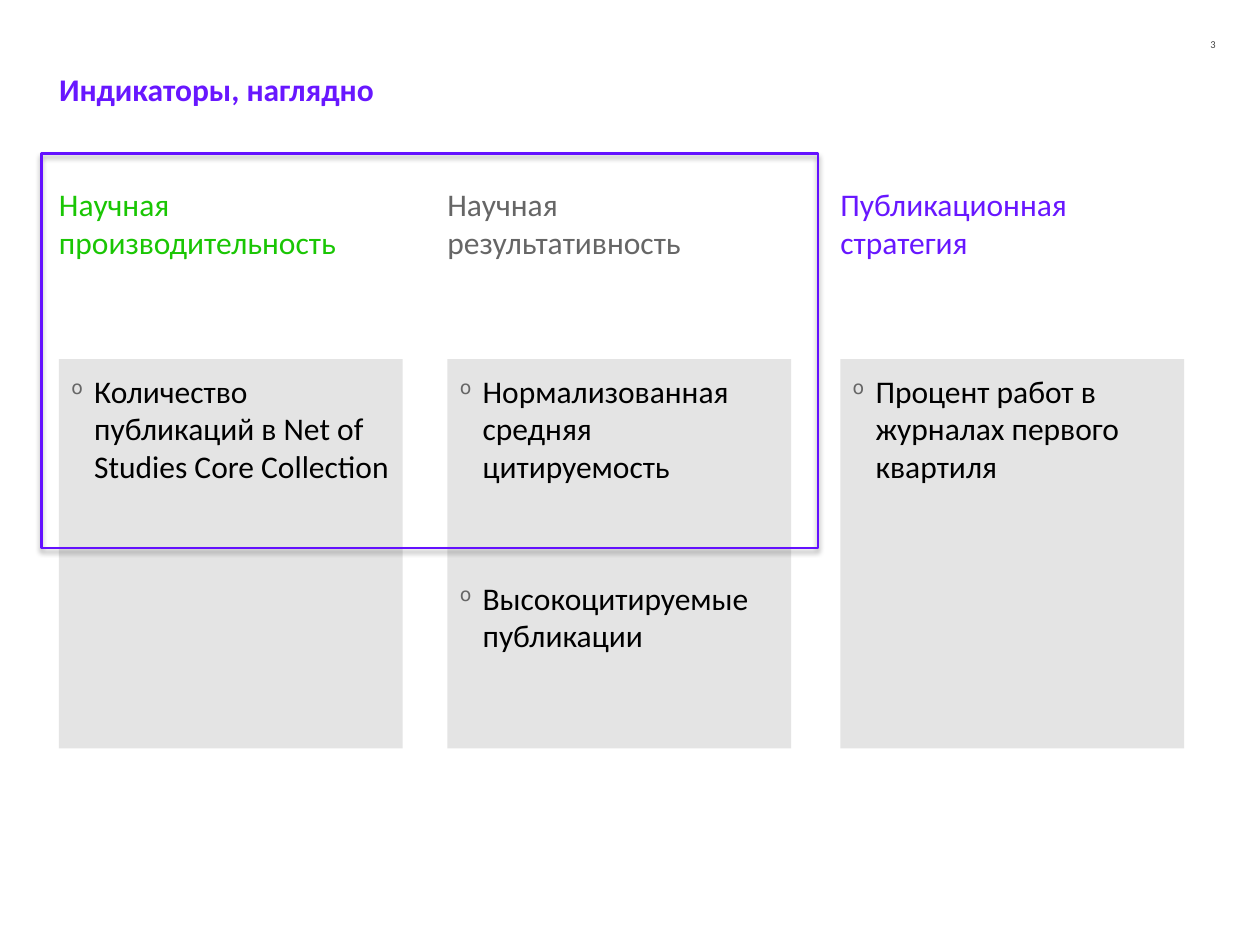
"""Build the slide that groups publication indicators into three columns."""
import lxml.etree
import pptx
import pptx.dml.color
import pptx.enum.shapes
import pptx.enum.text
import pptx.oxml.ns
import pptx.util

Cm = pptx.util.Cm
Pt = pptx.util.Pt

TITLE = "Индикаторы, наглядно"
SLIDE_NUMBER = "3"
COLUMNS = [
    {"left": 1.19, "heading": "Научная производительность", "color": "green",
     "heading_width": 6.25,
     "indicators": ["Количество публикаций в Net of Studies Core Collection"]},
    {"left": 9.02, "heading": "Научная результативность", "color": "gray",
     "heading_width": 5.54,
     "indicators": ["Нормализованная средняя цитируемость",
                    "Высокоцитируемые публикации"]},
    {"left": 16.94, "heading": "Публикационная стратегия", "color": "violet",
     "heading_width": 6.93,
     "indicators": ["Процент работ в журналах первого квартиля"]},
]
THEME = {
    "font": "Calibri", "text_size": 18, "number_size": 6,
    "violet": "6817FF", "green": "1AC604", "gray": "666666", "black": "000000",
    "number": "444444", "panel": "E4E4E4", "frame": "6411FF",
}
HEADING_TOP, HEADING_HEIGHT = 3.73, 1.8
PANEL_TOP, PANEL_WIDTH, PANEL_HEIGHT = 7.24, 6.93, 7.85
PANEL_INSET = 0.25
INDICATOR_GAP = 53.5
FRAME = (0.84, 3.1, 15.65, 7.95)


def theme_color(name):
    return pptx.dml.color.RGBColor.from_string(THEME[name])


def add_element(parent, tag, **attributes):
    element = lxml.etree.SubElement(parent, pptx.oxml.ns.qn(tag))
    for name, value in attributes.items():
        element.set(name, value)
    return element


def prepare_frame(shape, insets=(0, 0, 0, 0)):
    text_frame = shape.text_frame
    text_frame.word_wrap = True
    text_frame.auto_size = pptx.enum.text.MSO_AUTO_SIZE.NONE
    text_frame.vertical_anchor = pptx.enum.text.MSO_ANCHOR.TOP
    (text_frame.margin_left, text_frame.margin_top,
     text_frame.margin_right, text_frame.margin_bottom) = map(Cm, insets)
    return text_frame


def add_run(paragraph, text, color, size="text_size", bold=False,
            alignment=pptx.enum.text.PP_ALIGN.LEFT):
    paragraph.alignment = alignment
    run = paragraph.add_run()
    run.text = text
    run.font.name = THEME["font"]
    run.font.size = Pt(THEME[size])
    run.font.bold = bold
    run.font.color.rgb = theme_color(color)


def add_bullet(paragraph):
    properties = paragraph._p.get_or_add_pPr()
    properties.set("marL", str(Cm(0.71)))
    properties.set("indent", str(-Cm(0.46)))
    bullet_color = add_element(properties, "a:buClr")
    add_element(bullet_color, "a:srgbClr", val=THEME["gray"])
    add_element(properties, "a:buSzPct", val="60000")
    add_element(properties, "a:buChar", char="o")


def add_text(slide, box, text, color, **run_options):
    shape = slide.shapes.add_textbox(*map(Cm, box))
    text_frame = prepare_frame(shape)
    add_run(text_frame.paragraphs[0], text, color, **run_options)
    return text_frame


def add_rectangle(slide, box):
    shape = slide.shapes.add_shape(
        pptx.enum.shapes.MSO_SHAPE.RECTANGLE, *map(Cm, box))
    shape.shadow.inherit = False
    return shape


def add_panel(slide, column):
    panel = add_rectangle(
        slide, (column["left"], PANEL_TOP, PANEL_WIDTH, PANEL_HEIGHT))
    panel.fill.solid()
    panel.fill.fore_color.rgb = theme_color("panel")
    panel.line.fill.background()
    text_frame = prepare_frame(
        panel, (0, PANEL_INSET, PANEL_INSET, PANEL_INSET))
    for index, indicator in enumerate(column["indicators"]):
        paragraph = (text_frame.add_paragraph() if index
                     else text_frame.paragraphs[0])
        add_bullet(paragraph)
        if index:
            paragraph.space_before = Pt(INDICATOR_GAP)
        add_run(paragraph, indicator, "black")


def add_highlight(slide):
    highlight = add_rectangle(slide, FRAME)
    highlight.fill.background()
    highlight.line.color.rgb = theme_color("frame")
    highlight.line.width = Pt(1.5)
    effects = highlight._element.spPr.find(pptx.oxml.ns.qn("a:effectLst"))
    shadow = add_element(effects, "a:outerShdw", blurRad=str(Pt(3.1)),
                         dist=str(Pt(1.8)), dir="5400000", rotWithShape="0")
    shadow_color = add_element(shadow, "a:srgbClr", val=THEME["black"])
    add_element(shadow_color, "a:alpha", val="35000")


def main():
    presentation = pptx.Presentation()
    presentation.slide_width, presentation.slide_height = Cm(25.4), Cm(19.05)
    slide = presentation.slides.add_slide(presentation.slide_layouts[5])

    number_frame = add_text(
        slide, (23.9, 0.41, 0.61, 0.61), SLIDE_NUMBER, "number",
        size="number_size", alignment=pptx.enum.text.PP_ALIGN.RIGHT)
    number_frame.vertical_anchor = pptx.enum.text.MSO_ANCHOR.BOTTOM

    title = slide.shapes.title
    title.left, title.top, title.width, title.height = map(
        Cm, (COLUMNS[0]["left"], 1.42, 21.49, 1.12))
    add_run(prepare_frame(title).paragraphs[0], TITLE, "violet", bold=True)

    for column in COLUMNS:
        heading_box = (column["left"], HEADING_TOP,
                       column["heading_width"], HEADING_HEIGHT)
        add_text(slide, heading_box, column["heading"], column["color"])
        add_panel(slide, column)
    add_highlight(slide)

    presentation.save("out.pptx")


if __name__ == "__main__":
    main()
